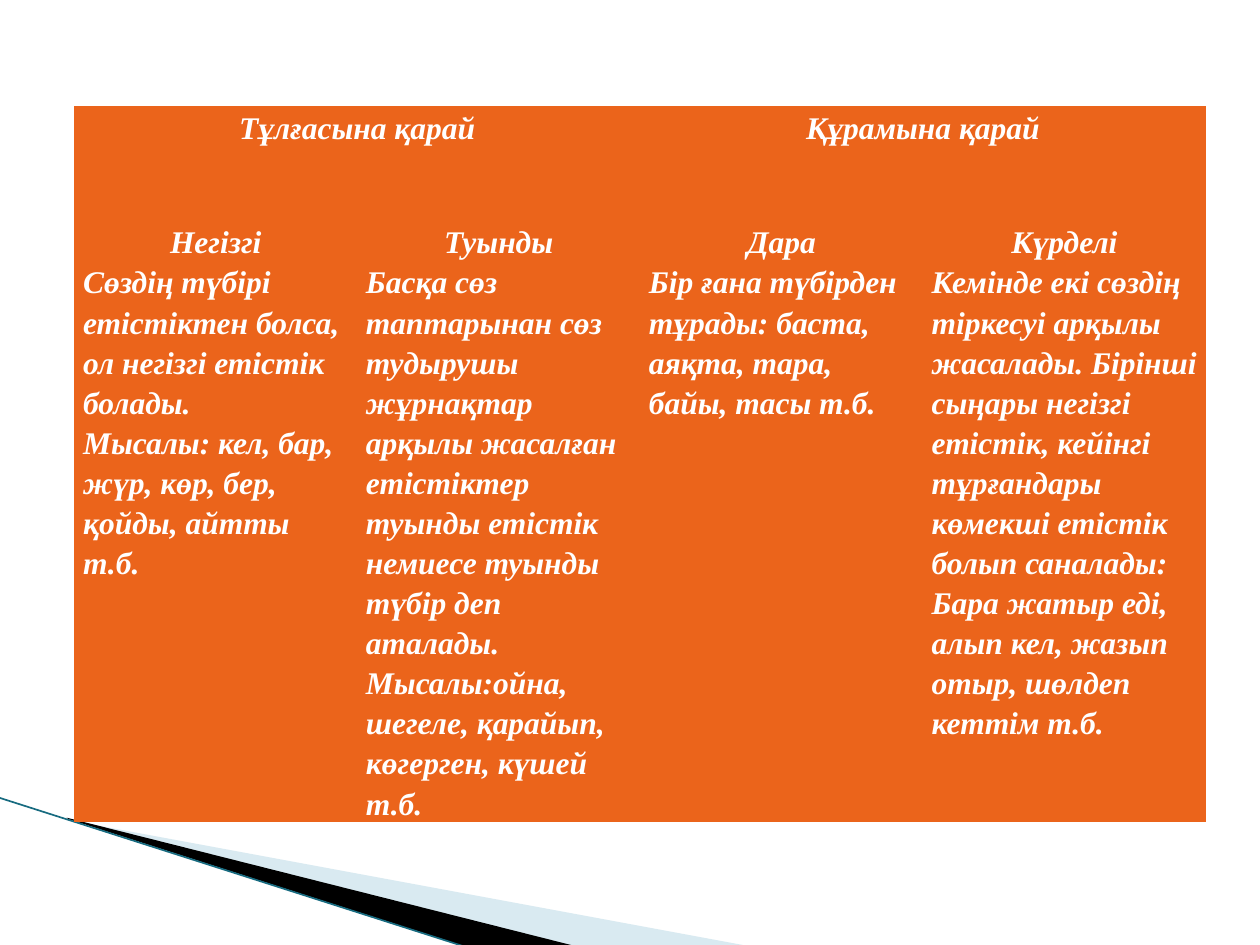
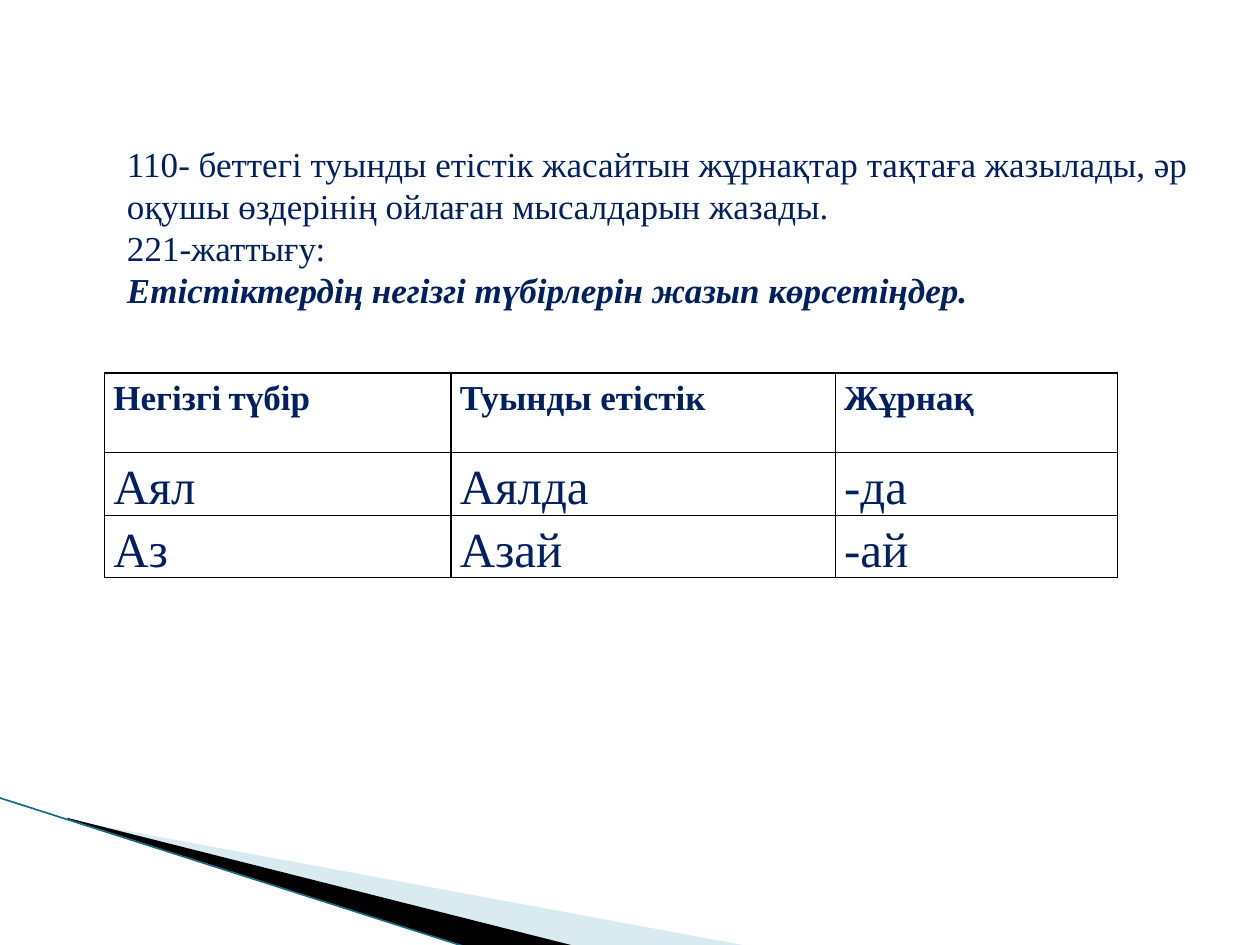
from lxml import etree
from pptx import Presentation
from pptx.dml.color import RGBColor
from pptx.enum import shapes, text
from pptx.oxml import ns
from pptx.util import Inches, Pt

FONT = "Times New Roman"
COLORS = {"orange": "EB641B", "white": "FFFFFF", "navy": "002060",
          "black": "000000", "pale": "A0CBDC", "teal": "176B80"}
NO_GRID_STYLE = "{2D5ABB26-0587-4C30-8999-92F81FD0307C}"

WEDGES = [
    ("pale", 40, [(0.55, 6.51), (5.95, 7.51), (4.56, 7.51), (0.55, 6.5)]),
    ("black", 100, [(0.53, 6.49), (4.57, 7.51), (3.72, 7.52), (0.54, 6.5)]),
]
EDGE = [(-0.01, 6.33), (3.71, 7.52)]

GROUPS = ["Тұлғасына қарай", "Құрамына қарай"]
VERB_TYPES = [
    ("Негізгі", ["Сөздің түбірі етістіктен болса, ол негізгі етістік болады.",
                 "Мысалы: кел, бар, жүр, көр, бер, қойды, айтты т.б."]),
    ("Туынды", ["Басқа сөз таптарынан сөз тудырушы жұрнақтар арқылы жасалған "
                "етістіктер туынды етістік немиесе туынды түбір деп аталады.",
                "Мысалы:ойна, шегеле, қарайып, көгерген, күшей т.б."]),
    ("Дара", ["Бір ғана түбірден тұрады: баста, аяқта, тара, байы, тасы т.б."]),
    ("Күрделі", ["Кемінде екі сөздің тіркесуі арқылы жасалады. Бірінші сыңары "
                 "негізгі етістік, кейінгі тұрғандары көмекші етістік болып саналады: "
                 "Бара жатыр еді, алып кел, жазып отыр, шөлдеп кеттім т.б."]),
]

TASK = [
    ("110- беттегі туынды етістік жасайтын жұрнақтар тақтаға жазылады, "
     "әр оқушы өздерінің ойлаған мысалдарын жазады.", False),
    ("221-жаттығу:", False),
    ("Етістіктердің негізгі түбірлерін жазып көрсетіңдер.", True),
]
SUFFIX_HEADER = [[("Негізгі", 20), (" ", 16), ("түбір", 20)],
                 [("Туынды етістік", 20)], [("Жұрнақ", 20)]]
SUFFIX_ROWS = [["Аял", "Аялда", "-да"], ["Аз", "Азай", "-ай"]]


def rgb(name):
    return RGBColor.from_string(COLORS[name])


def add_run(paragraph, words, size, color, bold=False, italic=False):
    run = paragraph.add_run()
    run.text = words
    font = run.font
    font.name, font.size, font.bold, font.italic = FONT, Pt(size), bold, italic
    font.color.rgb = rgb(color)


def next_paragraph(frame, index):
    return frame.add_paragraph() if index else frame.paragraphs[0]


def add_corner(slide):
    for color, opacity, points in WEDGES:
        corners = [(Inches(x), Inches(y)) for x, y in points]
        builder = slide.shapes.build_freeform(*corners[0], scale=1.0)
        builder.add_line_segments(corners[1:], close=True)
        wedge = builder.convert_to_shape()
        wedge.shadow.inherit = False
        wedge.fill.solid()
        wedge.fill.fore_color.rgb = rgb(color)
        wedge.line.fill.background()
        if opacity < 100:
            tint = wedge.fill._xPr.find(".//" + ns.qn("a:srgbClr"))
            etree.SubElement(tint, ns.qn("a:alpha"), val=str(opacity * 1000))
    ends = [Inches(value) for point in EDGE for value in point]
    edge = slide.shapes.add_connector(shapes.MSO_CONNECTOR.STRAIGHT, *ends)
    edge.line.color.rgb = rgb("teal")
    edge.line.width = Pt(0.95)
    etree.SubElement(edge._element.spPr, ns.qn("a:effectLst"))


def add_grid(slide, left, top, widths, heights):
    frame = slide.shapes.add_table(len(heights), len(widths), Inches(left), Inches(top),
                                   Inches(sum(widths)), Inches(sum(heights)))
    table = frame.table
    table._tbl.tblPr.find(ns.qn("a:tableStyleId")).text = NO_GRID_STYLE
    table.first_row = table.horz_banding = False
    for column, width in zip(table.columns, widths):
        column.width = Inches(width)
    for row, height in zip(table.rows, heights):
        row.height = Inches(height)
    return table


def add_borders(cell):
    for side in ("lnL", "lnR", "lnT", "lnB"):
        line = etree.SubElement(cell._tc.get_or_add_tcPr(), ns.qn("a:" + side), w=str(Pt(1)))
        fill = etree.SubElement(line, ns.qn("a:solidFill"))
        etree.SubElement(fill, ns.qn("a:srgbClr"), val=COLORS["black"])


def fill_cell(cell, paragraphs, color, bold, italic=False, centered=False, fill=None):
    cell.margin_left = cell.margin_right = Inches(0.07)
    cell.margin_top = cell.margin_bottom = 0
    if fill:
        cell.fill.solid()
        cell.fill.fore_color.rgb = rgb(fill)
    else:
        cell.fill.background()
    for index, runs in enumerate(paragraphs):
        paragraph = next_paragraph(cell.text_frame, index)
        paragraph.line_spacing = 1.15
        paragraph.alignment = text.PP_ALIGN.CENTER if centered else text.PP_ALIGN.LEFT
        for words, size in runs:
            add_run(paragraph, words, size, color, bold, italic)


def build_verb_types(slide):
    table = add_grid(slide, 0.59, 0.84, [2.245] * len(VERB_TYPES), [0.91, 0.26, 4.34])

    def fill_orange(row, column, lines, centered):
        fill_cell(table.cell(row, column), [[(line, 18)] for line in lines],
                  "white", True, True, centered, "orange")

    for index, group in enumerate(GROUPS):
        first = 2 * index
        table.cell(0, first).merge(table.cell(0, first + 1))
        fill_orange(0, first, [group], True)
    for column, (name, lines) in enumerate(VERB_TYPES):
        fill_orange(1, column, [name], True)
        fill_orange(2, column, lines, False)


def build_exercise(slide):
    table = add_grid(slide, 0.83, 2.96, [2.75, 3.05, 2.24], [0.63, 0.5, 0.49])
    rows = [SUFFIX_HEADER] + [[[(word, 28)] for word in row] for row in SUFFIX_ROWS]
    for row_index, row in enumerate(rows):
        for column, runs in enumerate(row):
            cell = table.cell(row_index, column)
            add_borders(cell)
            fill_cell(cell, [runs], "navy", row_index == 0)

    box = slide.shapes.add_textbox(Inches(0.91), Inches(1.07), Inches(8.74), Inches(1.45))
    frame = box.text_frame
    frame.word_wrap = True
    frame.auto_size = text.MSO_AUTO_SIZE.SHAPE_TO_FIT_TEXT
    frame.vertical_anchor = text.MSO_ANCHOR.MIDDLE
    for index, (words, strong) in enumerate(TASK):
        add_run(next_paragraph(frame, index), words, 20, "navy", strong, strong)


def main():
    presentation = Presentation()
    presentation.slide_width, presentation.slide_height = Inches(10), Inches(7.5)
    for build in (build_verb_types, build_exercise):
        slide = presentation.slides.add_slide(presentation.slide_layouts[6])
        add_corner(slide)
        build(slide)
    presentation.save("out.pptx")


if __name__ == "__main__":
    main()
